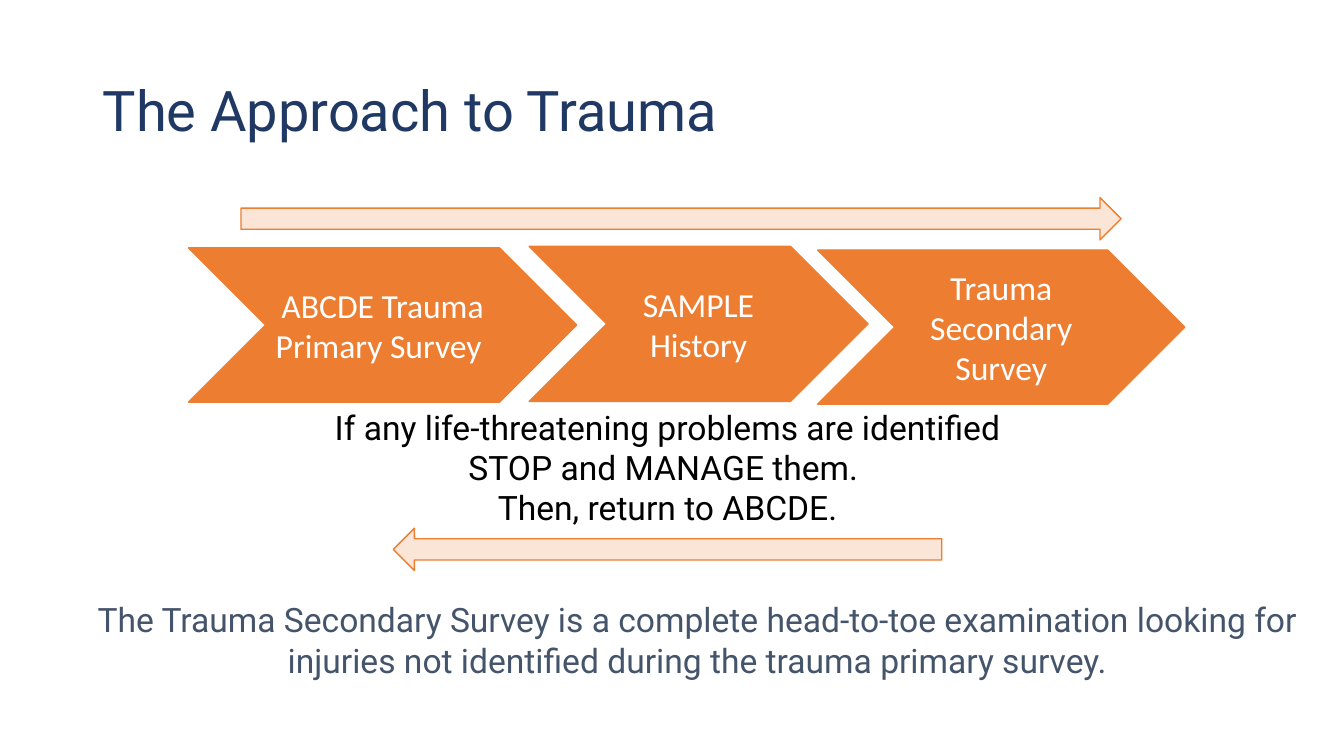
from dataclasses import dataclass

import pptx
import pptx.dml.color
import pptx.enum.shapes
import pptx.enum.text
import pptx.util

MSO_SHAPE = pptx.enum.shapes.MSO_SHAPE
PP_ALIGN = pptx.enum.text.PP_ALIGN
WIDTH = pptx.util.Inches(13.333)
HEIGHT = pptx.util.Inches(7.5)
COLORS = {
    "orange": "ED7D31",
    "peach": "FBE5D6",
    "navy": "1F3864",
    "slate": "44546A",
    "black": "000000",
    "white": "FFFFFF",
}


@dataclass(frozen=True)
class Box:
    """Position and size in percent of the slide's width and height."""

    left: float
    top: float
    width: float
    height: float

    def emu(self) -> tuple[int, int, int, int]:
        return (
            round(WIDTH * self.left / 100),
            round(HEIGHT * self.top / 100),
            round(WIDTH * self.width / 100),
            round(HEIGHT * self.height / 100),
        )


@dataclass(frozen=True)
class Block:
    box: Box
    lines: tuple[str, ...]
    color: str
    size: int = 24
    font: str = "Roboto"
    align: PP_ALIGN = PP_ALIGN.CENTER
    spacing: float = 1.0
    indent: float = 0.0


@dataclass(frozen=True)
class Figure:
    kind: MSO_SHAPE
    box: Box
    fill: str
    label: str = ""


FIGURES = (
    Figure(MSO_SHAPE.CHEVRON, Box(14.03, 32.8, 28.88, 20.4), "orange", "ABCDE Trauma Primary Survey "),
    Figure(MSO_SHAPE.CHEVRON, Box(39.38, 32.6, 25.21, 20.5), "orange", "SAMPLE History"),
    Figure(MSO_SHAPE.CHEVRON, Box(60.84, 33.07, 27.31, 20.4), "orange", "Trauma Secondary Survey"),
    Figure(MSO_SHAPE.LEFT_ARROW, Box(29.26, 69.87, 40.81, 5.6), "peach"),
    Figure(MSO_SHAPE.RIGHT_ARROW, Box(17.93, 26.13, 65.49, 5.6), "peach"),
)

BLOCKS = (
    Block(
        Box(6.9, 5.33, 86.27, 19.33),
        ("The Approach to Trauma",),
        "navy",
        size=40,
        align=PP_ALIGN.LEFT,
        spacing=0.9,
    ),
    Block(
        Box(22.96, 54.13, 53.41, 15.33),
        (
            "If any life-threatening problems are identified",
            "STOP and MANAGE them. ",
            "Then, return to ABCDE.",
        ),
        "black",
    ),
    Block(
        Box(2.33, 78.93, 95.35, 11.33),
        (
            "The Trauma Secondary Survey is a complete head-to-toe examination looking for "
            "injuries not identified during the trauma primary survey.",
        ),
        "slate",
        indent=0.5,
    ),
)


def rgb(name: str) -> pptx.dml.color.RGBColor:
    return pptx.dml.color.RGBColor.from_string(COLORS[name])


def write(tf: pptx.text.text.TextFrame, block: Block) -> None:
    tf.word_wrap = True
    tf.vertical_anchor = pptx.enum.text.MSO_ANCHOR.MIDDLE
    for i, line in enumerate(block.lines):
        p = tf.add_paragraph() if i else tf.paragraphs[0]
        p.text = line
        p.alignment = block.align
        p.line_spacing = block.spacing
        if block.indent:
            p.level = 1
            pPr = p._p.get_or_add_pPr()
            pPr.set("marL", str(pptx.util.Inches(block.indent)))
            pPr.set("indent", "0")
        p.font.name = block.font
        p.font.size = pptx.util.Pt(block.size)
        p.font.color.rgb = rgb(block.color)


def draw_figure(slide: pptx.slide.Slide, figure: Figure) -> None:
    sp = slide.shapes.add_shape(figure.kind, *figure.box.emu())
    sp.shadow.inherit = False
    sp.fill.solid()
    sp.fill.fore_color.rgb = rgb(figure.fill)
    sp.line.color.rgb = rgb("orange")
    sp.line.width = pptx.util.Pt(1)
    if figure.label:
        write(sp.text_frame, Block(figure.box, (figure.label,), "white", font="Calibri"))


def draw_block(slide: pptx.slide.Slide, block: Block) -> None:
    sp = slide.shapes.add_textbox(*block.box.emu())
    write(sp.text_frame, block)


def main() -> None:
    prs = pptx.Presentation()
    prs.slide_width, prs.slide_height = WIDTH, HEIGHT
    slide = prs.slides.add_slide(prs.slide_layouts[6])
    for figure in FIGURES:
        draw_figure(slide, figure)
    for block in BLOCKS:
        draw_block(slide, block)
    prs.save("out.pptx")


if __name__ == "__main__":
    main()
